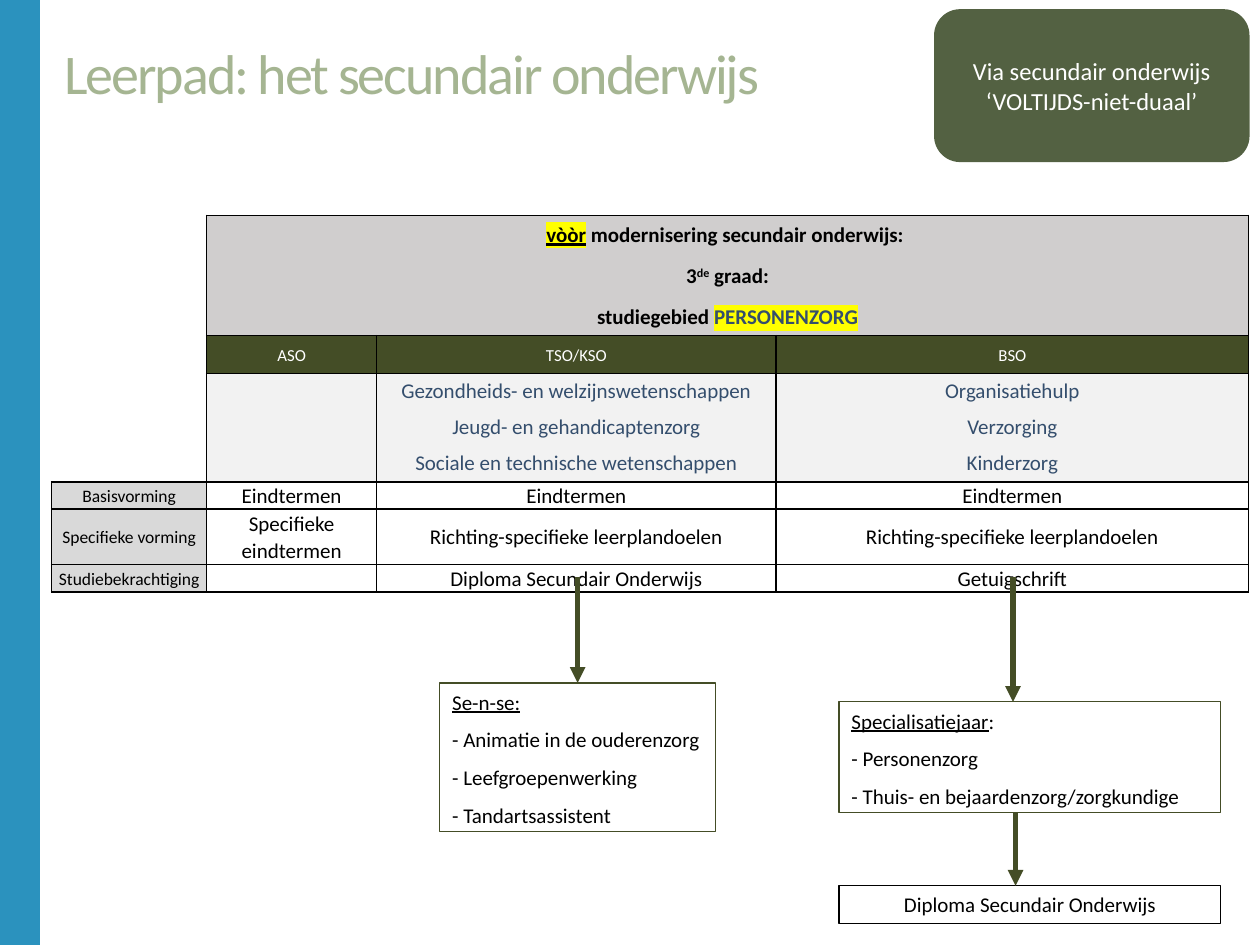
"""Build the slide on the learning path through secondary education."""
from lxml.etree import SubElement
from pptx import Presentation
from pptx.dml.color import RGBColor
from pptx.enum.shapes import MSO_CONNECTOR, MSO_SHAPE
from pptx.enum.text import MSO_ANCHOR, MSO_AUTO_SIZE, PP_ALIGN
from pptx.oxml.ns import qn
from pptx.util import Inches, Pt

BLACK = RGBColor(0x00, 0x00, 0x00)
WHITE = RGBColor(0xFF, 0xFF, 0xFF)
BLUE = RGBColor(0x2B, 0x92, 0xBE)
SAGE = RGBColor(0xA5, 0xB5, 0x92)
MOSS = RGBColor(0x53, 0x61, 0x42)
OLIVE = RGBColor(0x44, 0x4D, 0x26)
NAVY = RGBColor(0x34, 0x4E, 0x6D)
GREY = RGBColor(0xD0, 0xCE, 0xCE)
PALE = RGBColor(0xF2, 0xF2, 0xF2)
LABEL = RGBColor(0xD9, 0xD9, 0xD9)
YELLOW = RGBColor(0xFF, 0xFF, 0x00)
FONT = "Calibri"
COLUMNS, ROWS = 100, 75


def add_color(parent, tag, color):
    """Append a colour element to an XML parent."""
    SubElement(SubElement(parent, qn(tag)), qn("a:srgbClr"), val=str(color))


class SlideBuilder:
    """Holds the style and the current slide; lengths are grid columns and rows."""

    def __init__(self, presentation):
        self.column = presentation.slide_width / COLUMNS
        self.row = presentation.slide_height / ROWS
        self.slide = presentation.slides.add_slide(presentation.slide_layouts[5])

    def place(self, left, top, width, height):
        """Turn grid lengths into slide lengths."""
        return (round(left * self.column), round(top * self.row),
                round(width * self.column), round(height * self.row))

    def fill_text(self, frame, paragraphs, size, color, align=PP_ALIGN.LEFT,
                  spacing=None, after=0, bold=False):
        """Fill a frame; a paragraph is a string or a list of (text, marks)."""
        for index, content in enumerate(paragraphs):
            paragraph = frame.paragraphs[0] if index == 0 else frame.add_paragraph()
            paragraph.alignment = align
            paragraph.space_after = Pt(after)
            if spacing:
                paragraph.line_spacing = spacing
            font = paragraph.font
            font.name, font.size, font.bold = FONT, Pt(size), bold
            font.color.rgb = color
            runs = [(content, {})] if isinstance(content, str) else content
            for text, marks in runs:
                run = paragraph.add_run()
                run.text = text
                self.mark(run.font, color, **marks)

    def mark(self, font, base, color=None, underline=None, highlight=None, **attributes):
        """Apply what sets one run apart from its paragraph."""
        if underline:
            font.underline = True
        if color or highlight:
            font.color.rgb = color or base
        if highlight:
            add_color(font._element, "a:highlight", highlight)
        for name, value in attributes.items():
            font._element.set(name, value)

    def title(self, text, box):
        """Move and format the title placeholder."""
        heading = self.slide.shapes.title
        heading.left, heading.top, heading.width, heading.height = self.place(*box)
        frame = heading.text_frame
        frame.auto_size = MSO_AUTO_SIZE.NONE
        frame.vertical_anchor = MSO_ANCHOR.MIDDLE
        self.fill_text(frame, [[(text, {"spc": "-120"})]], 32, SAGE, spacing=0.9)

    def box(self, box, fill=None, line=OLIVE, weight=0.75, kind=MSO_SHAPE.RECTANGLE,
            anchor=MSO_ANCHOR.TOP):
        """Add a preset shape and return it."""
        shape = self.slide.shapes.add_shape(kind, *self.place(*box))
        shape.shadow.inherit = False
        if fill is None:
            shape.fill.background()
        else:
            shape.fill.solid()
            shape.fill.fore_color.rgb = fill
        shape.line.color.rgb = line
        shape.line.width = Pt(weight)
        shape.text_frame.word_wrap = True
        shape.text_frame.vertical_anchor = anchor
        return shape

    def arrow(self, across, top, bottom, target=None):
        """Add a downward arrow, joined to the top of a target if given."""
        left, start, _, length = self.place(across, top, 0, bottom - top)
        arrow = self.slide.shapes.add_connector(
            MSO_CONNECTOR.STRAIGHT, left, start, left, start + length)
        if target is not None:
            arrow.end_connect(target, 0)
        arrow.line.color.rgb = OLIVE
        arrow.line.width = Pt(3)
        SubElement(arrow.line._get_or_add_ln(), qn("a:tailEnd"), type="triangle")
        SubElement(arrow._element.spPr, qn("a:effectLst"))

    def table(self, left, top, widths, heights):
        """Add an unbanded table and return it."""
        table = self.slide.shapes.add_table(
            len(heights), len(widths),
            *self.place(left, top, sum(widths), sum(heights))).table
        table.first_row = table.horz_banding = False
        for column, width in zip(table.columns, widths):
            column.width = round(width * self.column)
        for row, height in zip(table.rows, heights):
            row.height = round(height * self.row)
        return table

    def cell(self, cell, paragraphs, fill=None, sides="LRTB", inset=0.04,
             size=12, color=BLACK, **style):
        """Border, fill and letter one centred table cell."""
        properties = cell._tc.get_or_add_tcPr()
        for side in "LRTB":
            edge = SubElement(properties, qn(f"a:ln{side}"), w=str(int(Pt(1))))
            if side in sides:
                add_color(edge, "a:solidFill", BLACK)
            else:
                SubElement(edge, qn("a:noFill"))
        if fill is None:
            cell.fill.background()
        else:
            cell.fill.solid()
            cell.fill.fore_color.rgb = fill
        cell.margin_left = cell.margin_right = Inches(0.04)
        cell.margin_top = cell.margin_bottom = Inches(inset)
        cell.vertical_anchor = MSO_ANCHOR.MIDDLE
        if paragraphs:
            self.fill_text(cell.text_frame, paragraphs, size, color, PP_ALIGN.CENTER,
                           **style)
        else:
            end = SubElement(cell.text_frame.paragraphs[0]._p, qn("a:endParaRPr"))
            end.set("sz", str(size * 100))


def add_studies(builder):
    """Add the table of study fields, goals and certificates."""
    table = builder.table(4.1, 17.1, [12.3, 13.5, 31.7, 37.5],
                          [9.5, 3, 8.6, 2.1, 4.4, 2.1])
    table.cell(0, 0).merge(table.cell(2, 0))
    table.cell(0, 1).merge(table.cell(0, 3))
    for row in range(3):
        builder.cell(table.cell(row, 0), [], WHITE, sides="RB")
    heading = [
        [("vòòr", {"underline": True, "highlight": YELLOW}),
         (" modernisering secundair onderwijs: ", {})],
        [("3", {}), ("de", {"baseline": "30000"}), (" graad:", {})],
        [("studiegebied ", {}), ("PERSONENZORG", {"color": NAVY, "highlight": YELLOW})],
    ]
    for column in range(1, 4):
        builder.cell(table.cell(0, column), heading if column == 1 else [], GREY,
                     spacing=1.07, after=8, bold=True)
    fields = {
        "aso": [],
        "tso/kso": ["Gezondheids- en welzijnswetenschappen", "Jeugd- en gehandicaptenzorg",
                    "Sociale en technische wetenschappen"],
        "bso": ["Organisatiehulp", "Verzorging", "Kinderzorg"],
    }
    for column, (form, studies) in enumerate(fields.items(), 1):
        builder.cell(table.cell(1, column), [[(form, {"cap": "small"})]], OLIVE,
                     color=WHITE, after=6)
        builder.cell(table.cell(2, column), studies, PALE, color=NAVY, after=6)
    goals = [
        ["Basisvorming"] + ["Eindtermen"] * 3,
        ["Specifieke vorming", "Specifieke eindtermen"]
        + ["Richting-specifieke leerplandoelen"] * 2,
        ["Studiebekrachtiging", "", "Diploma Secundair Onderwijs", "Getuigschrift"],
    ]
    for row, texts in enumerate(goals, 3):
        for column, text in enumerate(texts):
            label = column == 0
            builder.cell(table.cell(row, column), [text] if text else [],
                         LABEL if label else None, inset=0, size=10 if label else 12,
                         spacing=1.07, after=8)


def add_follow_up(builder):
    """Add the arrows and boxes for the years after the third grade."""
    further = builder.box((34.9, 54.2, 21.9, 11.8))
    special = builder.box((66.6, 55.7, 30.3, 8.8))
    diploma = builder.box((66.6, 70.3, 30.3, 3), line=BLACK)
    further.text_frame.word_wrap = False
    lists = [
        (further, [("Se-n-se:", {"underline": True})],
         ["- Animatie in de ouderenzorg", "- Leefgroepenwerking", "- Tandartsassistent"]),
        (special, [("Specialisatiejaar", {"underline": True}), (":", {})],
         ["- Personenzorg", "- Thuis- en bejaardenzorg/zorgkundige"]),
    ]
    for box, name, options in lists:
        builder.fill_text(box.text_frame, [name] + options, 12, BLACK)
        for paragraph in box.text_frame.paragraphs[1:]:
            paragraph.line_spacing = 1.5
    builder.fill_text(diploma.text_frame, ["Diploma Secundair Onderwijs"], 12, BLACK,
                      PP_ALIGN.CENTER)
    builder.arrow(45.85, 45.8, 54.2, further)
    builder.arrow(80.4, 45.8, 55.7)
    builder.arrow(80.6, 64.5, 70.3)


def main():
    """Build and save the slide."""
    presentation = Presentation()
    presentation.slide_width, presentation.slide_height = Inches(10), Inches(7.5)
    builder = SlideBuilder(presentation)
    builder.box((0, 0, 3.1, ROWS), BLUE, BLUE)
    builder.title("Leerpad: het secundair onderwijs", (4.1, 0, 85.2, 12.2))
    add_studies(builder)
    add_follow_up(builder)
    route = builder.box((74.2, 0.8, 24.9, 12), MOSS, MOSS, 1,
                        MSO_SHAPE.ROUNDED_RECTANGLE, MSO_ANCHOR.MIDDLE)
    builder.fill_text(route.text_frame, ["Via secundair onderwijs", "‘VOLTIJDS-niet-duaal’"],
                      14, WHITE, PP_ALIGN.CENTER)
    presentation.save("out.pptx")


if __name__ == "__main__":
    main()
